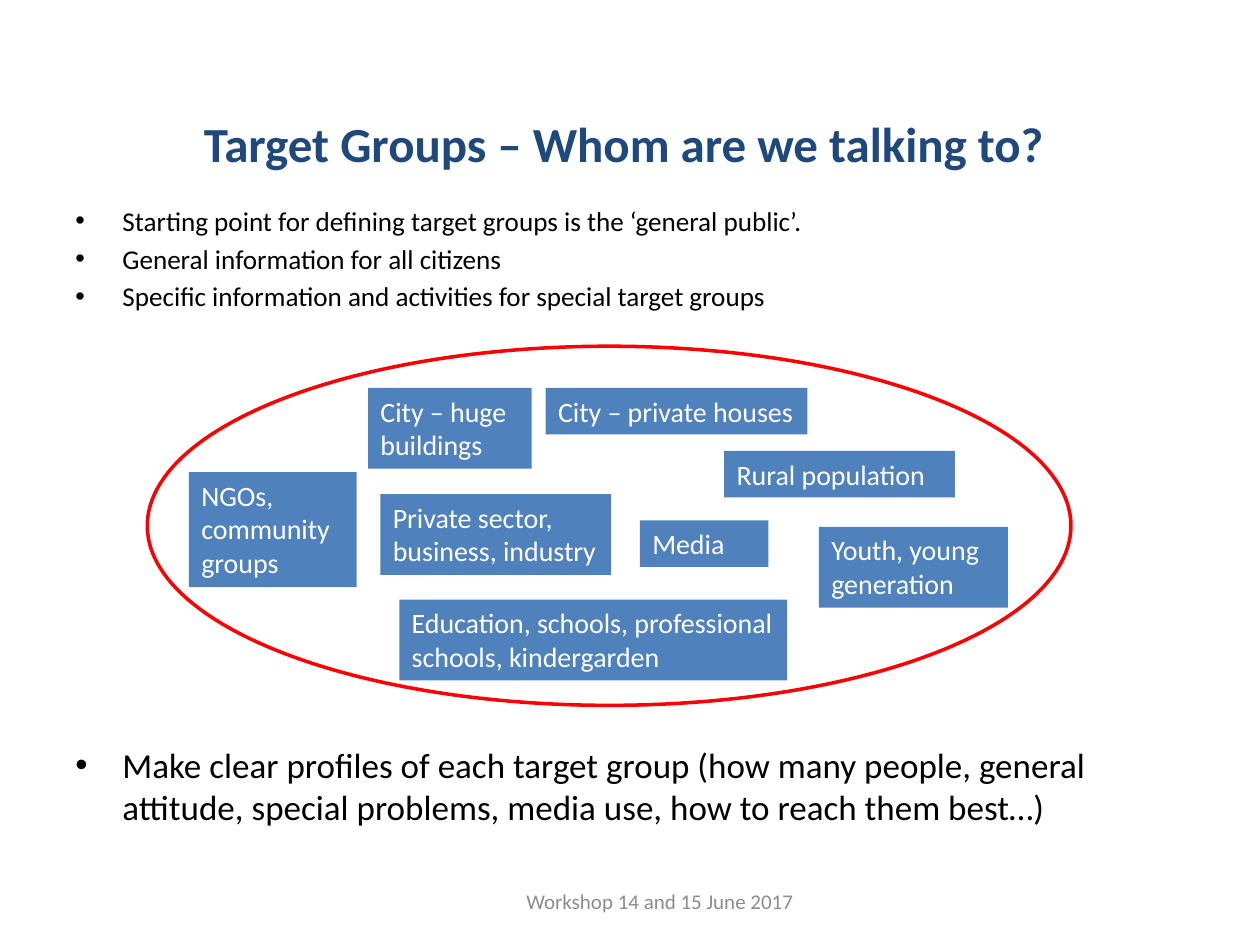
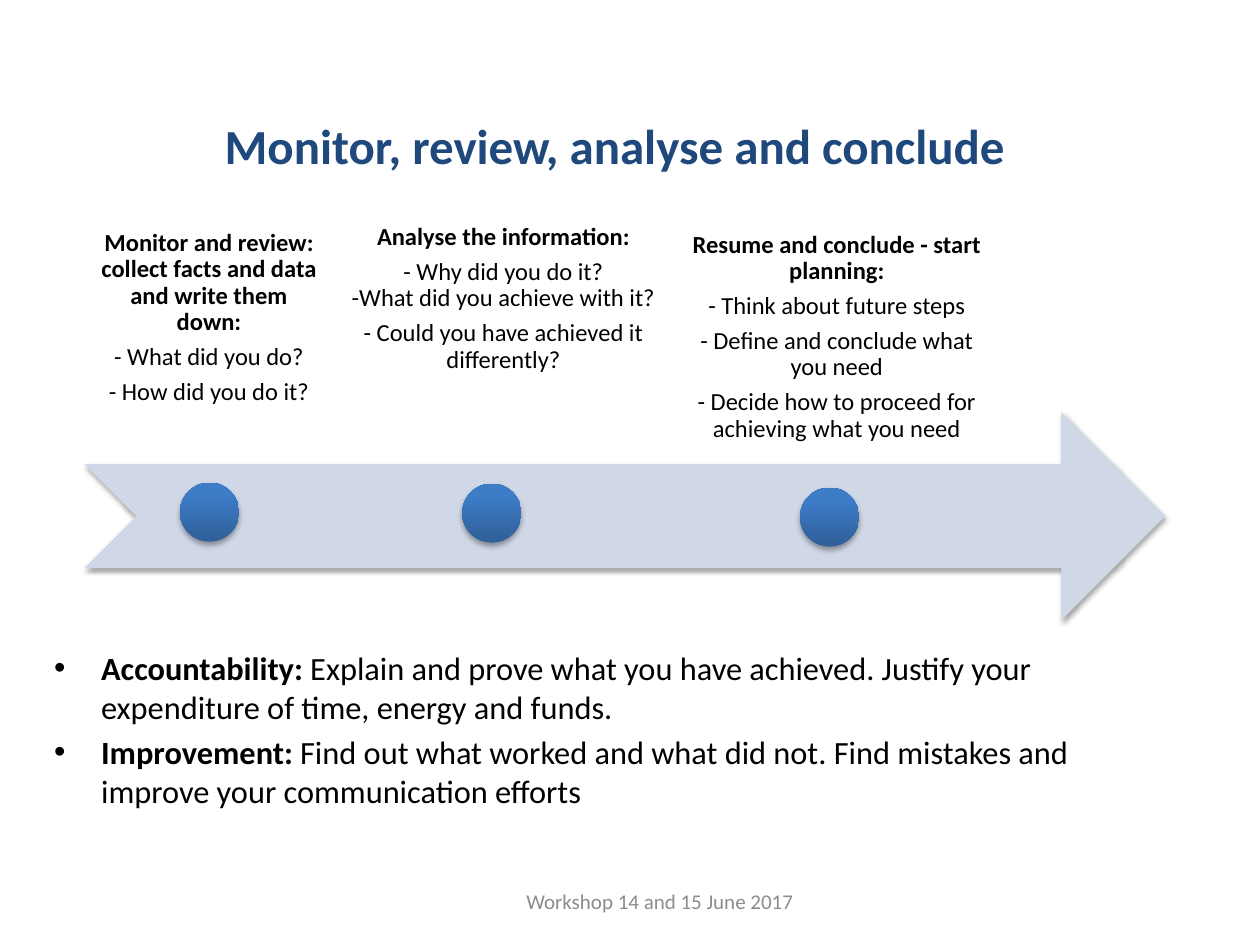
from dataclasses import dataclass

from lxml import etree
from pptx import Presentation
from pptx.dml.color import RGBColor
from pptx.enum.shapes import MSO_SHAPE
from pptx.enum.text import MSO_ANCHOR, PP_ALIGN
from pptx.oxml.ns import qn
from pptx.util import Cm, Pt

OVAL, RECT, ARROW = MSO_SHAPE.OVAL, MSO_SHAPE.RECTANGLE, MSO_SHAPE.NOTCHED_RIGHT_ARROW
TOP, MID, BASE = MSO_ANCHOR.TOP, MSO_ANCHOR.MIDDLE, MSO_ANCHOR.BOTTOM
LEFT, CENTER = PP_ALIGN.LEFT, PP_ALIGN.CENTER


@dataclass(frozen=True)
class Theme:
    font: str = "Calibri"
    # Colours
    navy: str = "1F497D"
    black: str = "000000"
    white: str = "FFFFFF"
    grey: str = "8C8C8C"
    red: str = "FF0000"
    blue: str = "4F81BD"
    pale: str = "D0D8E8"
    deep: str = "2F5F99"
    light: str = "3D7CC7"
    # Type sizes in points
    title: float = 28
    large: float = 20
    medium: float = 18.5
    label: float = 16
    small: float = 15.5
    step: float = 14
    foot: float = 12


def apply(item, values):
    for name, value in values.items():
        setattr(item, name, value)


class Deck:
    def __init__(self, theme):
        self.theme = theme
        self.file = Presentation()
        self.file.slide_width, self.file.slide_height = Cm(25.4), Cm(19.05)
        self.slide = None

    def page(self, title, box):
        """Start a slide with its title and the shared footer."""
        t = self.theme
        self.slide = self.file.slides.add_slide(self.file.slide_layouts[6])
        self.text(box, [[(title, True)]], t.title, t.navy, align=CENTER, anchor=MID)
        self.text((10.36, 17.65, 5.92, 1.02), [[("Workshop 14 and 15 June 2017", False)]],
                  t.foot, t.grey, anchor=MID)

    def fill(self, frame, paras, size, color, align=LEFT, anchor=TOP,
             bullet=False, gap=0, inset=None, lead=None):
        """Write paragraphs, each a list of (text, bold) runs."""
        apply(frame, {"word_wrap": True, "vertical_anchor": anchor})
        if inset:
            sides = ("left", "right", "top", "bottom")
            apply(frame, {f"margin_{side}": Cm(inset) for side in sides})
        for i, parts in enumerate(paras):
            para = frame.paragraphs[0] if i == 0 else frame.add_paragraph()
            apply(para, {"alignment": align, "line_spacing": lead,
                         "space_before": Pt(gap if i else 0)})
            if bullet:
                self.bullet(para)
            for text, bold in parts:
                for j, line in enumerate(text.split("\n")):
                    if j:
                        para.add_line_break()
                    run = para.add_run()
                    run.text = line
                    apply(run.font, {"name": self.theme.font, "size": Pt(size), "bold": bold})
                    run.font.color.rgb = RGBColor.from_string(color)
            for mark in para._p.findall(qn("a:br")):
                etree.SubElement(mark, qn("a:rPr"), sz=str(int(size * 100)))

    def bullet(self, para):
        props = para._p.get_or_add_pPr()
        props.set("marL", str(Cm(0.95)))
        props.set("indent", str(-Cm(0.95)))
        etree.SubElement(props, qn("a:buFont"), typeface="Arial")
        etree.SubElement(props, qn("a:buChar"), char="•")

    def text(self, box, paras, size, color, **style):
        area = self.slide.shapes.add_textbox(*map(Cm, box))
        self.fill(area.text_frame, paras, size, color, **style)

    def shape(self, kind, box, color=None, line=None, shade=False):
        item = self.slide.shapes.add_shape(kind, *map(Cm, box))
        item.shadow.inherit = False
        if color:
            item.fill.solid()
            item.fill.fore_color.rgb = RGBColor.from_string(color)
        else:
            item.fill.background()
        if line:
            item.line.color.rgb = RGBColor.from_string(line)
            item.line.width = Pt(2)
        else:
            item.line.fill.background()
        if shade:
            self.shade(item)
        return item

    def shade(self, item):
        """Add a soft shadow below the shape."""
        effects = item._element.spPr.find(qn("a:effectLst"))
        outer = etree.SubElement(effects, qn("a:outerShdw"), blurRad=str(Pt(3.1)),
                                 dist=str(Pt(1.8)), dir="5400000", rotWithShape="0")
        tint = etree.SubElement(outer, qn("a:srgbClr"), val=self.theme.black)
        etree.SubElement(tint, qn("a:alpha"), val="35000")

    def label(self, text, left, top, width, rows):
        box = (left, top, width, 0.94 + 0.69 * (rows - 1))
        item = self.shape(RECT, box, self.theme.blue)
        self.fill(item.text_frame, [[(text, False)]], self.theme.label, self.theme.white)

    def dot(self, left, top):
        item = self.shape(OVAL, (left, top, 1.19, 1.19), self.theme.deep, shade=True)
        item.fill.gradient()
        item.fill.gradient_angle = 90
        stops = ((0, self.theme.deep), (0.8, self.theme.light))
        for stop, (place, color) in zip(item.fill.gradient_stops, stops):
            stop.position = place
            stop.color.rgb = RGBColor.from_string(color)

    def step(self, box, anchor, head, *lines):
        paras = [[(head, True)]] + [[(line, False)] for line in lines]
        self.text(box, paras, self.theme.step, self.theme.black, align=CENTER,
                  anchor=anchor, gap=4.8, inset=0.28, lead=0.9)


def groups(deck):
    t = deck.theme
    deck.page("Target Groups – Whom are we talking to?", (1.14, 2.24, 22.86, 1.27))
    points = ("Starting point for defining target groups is the ‘general public’.",
              "General information for all citizens",
              "Specific information and activities for special target groups")
    deck.text((1.27, 3.99, 22.86, 2.16), [[(point, False)] for point in points],
              t.small, t.black, bullet=True, gap=3)

    # Target groups inside the oval: left, top, width, rows of text
    deck.shape(OVAL, (2.97, 6.98, 18.62, 7.24), line=t.red)
    for label in (
        ("NGOs, community groups", 3.81, 9.52, 3.38, 3),
        ("Private sector, business, industry", 7.67, 9.96, 4.65, 2),
        ("Education, schools, professional schools, kindergarden", 8.05, 12.09, 7.82, 2),
        ("Youth, young generation", 16.51, 10.62, 3.81, 2),
        ("Rural population", 14.6, 9.09, 4.65, 1),
        ("City – huge buildings", 7.42, 7.82, 3.3, 2),
        ("City – private houses", 11, 7.82, 5.28, 1),
        ("Media", 12.9, 10.49, 2.59, 1),
    ):
        deck.label(*label)

    # Advice
    advice = ("Make clear profiles of each target group (how many people, general "
              "attitude, special problems, media use, how to reach them best…)")
    deck.text((1.27, 14.86, 22.86, 2.16), [[(advice, False)]], t.large, t.black, bullet=True)


def review(deck):
    t = deck.theme
    deck.page("Monitor, review, analyse and conclude", (0.64, 1.9, 23.5, 2.03))

    # Arrow with one dot for each step
    deck.shape(ARROW, (1.7, 8.31, 21.79, 4.19), t.pale, shade=True)
    for spot in ((3.63, 9.73), (9.32, 9.75), (16.13, 9.83)):
        deck.dot(*spot)

    # Steps
    deck.step((1.7, 4.01, 5.03, 4.45), BASE,
              "Monitor and review: collect facts and data and write them down:",
              "- What did you do?", "- How did you do it?")
    deck.step((6.38, 4.24, 7.54, 3.89), TOP, "Analyse the information:",
              "- Why did you do it?\n-What did you achieve with it?",
              "- Could you have achieved it differently?")
    deck.step((13.49, 4.45, 6.76, 4.75), BASE, "Resume and conclude - start planning:",
              "- Think about future steps", "- Define and conclude what you need",
              "- Decide how to proceed for achieving what you need")

    # Reasons
    reasons = [
        [("Accountability:", True),
         (" Explain and prove what you have achieved. Justify your "
          "expenditure of time, energy and funds.", False)],
        [("Improvement:", True),
         (" Find out what worked and what did not. Find mistakes and "
          "improve your communication efforts", False)],
    ]
    deck.text((0.84, 13.11, 22.86, 3.18), reasons, t.medium, t.black,
              anchor=MID, bullet=True, gap=3.6)


def main():
    deck = Deck(Theme())
    groups(deck)
    review(deck)
    deck.file.save("out.pptx")


if __name__ == "__main__":
    main()
